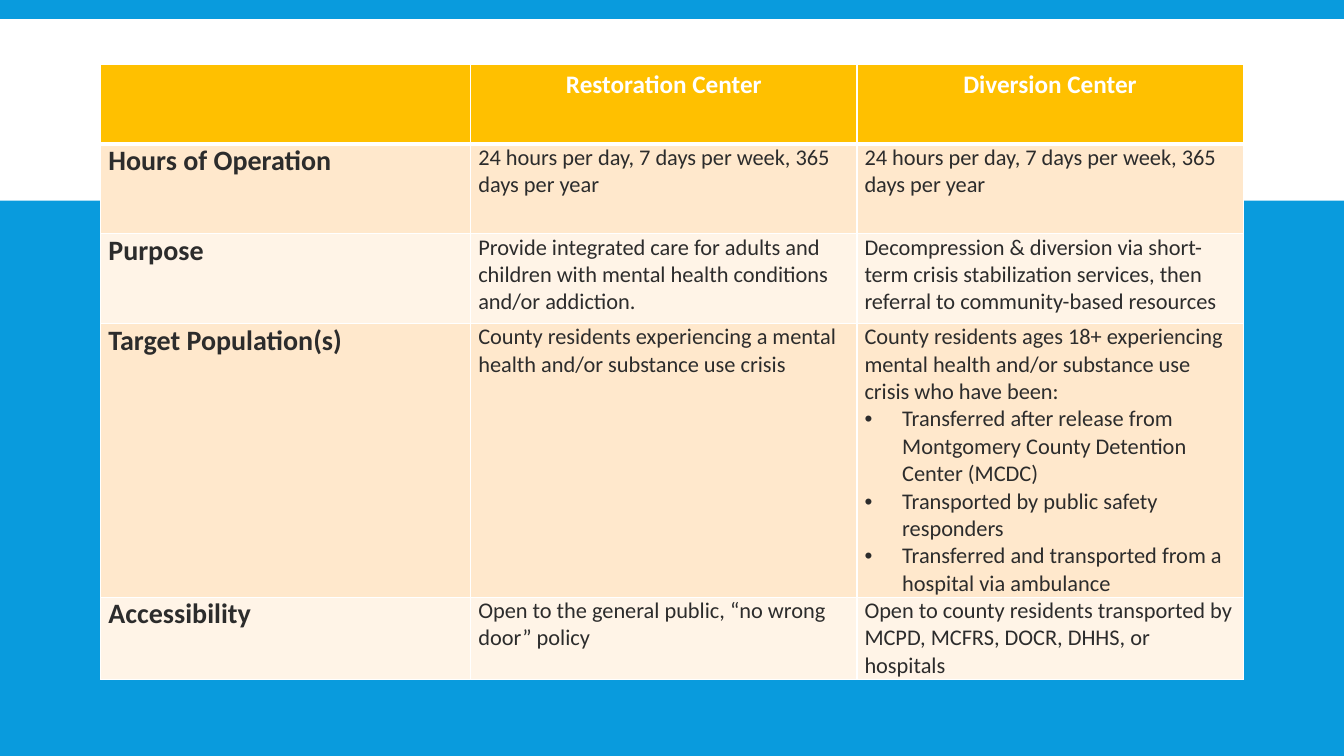
import lxml.etree
import pptx
import pptx.dml.color
import pptx.enum.shapes
import pptx.enum.text
import pptx.oxml.ns
import pptx.util

Cm = pptx.util.Cm
Pt = pptx.util.Pt
qn = pptx.oxml.ns.qn

HOURS = "24 hours per day, 7 days per week, 365 days per year"
ROWS = [
    ("", "Restoration Center", "Diversion Center"),
    ("Hours of Operation", HOURS, HOURS),
    ("Purpose",
     "Provide integrated care for adults and children with mental health "
     "conditions and/or addiction.",
     "Decompression & diversion via short-term crisis stabilization services, "
     "then referral to community-based resources"),
    ("Target Population(s)",
     "County residents experiencing a mental health and/or substance use crisis",
     ["County residents ages 18+ experiencing mental health and/or substance "
      "use crisis who have been:",
      "Transferred after release from Montgomery County Detention Center (MCDC)",
      "Transported by public safety responders",
      "Transferred and transported from a hospital via ambulance"]),
    ("Accessibility",
     "Open to the general public, “no wrong door” policy",
     "Open to county residents transported by MCPD, MCFRS, DOCR, DHHS, or hospitals"),
]


def color(code):
    return pptx.dml.color.RGBColor.from_string(code)


class Deck:
    """Holds the style and the current slide, and draws its elements."""

    font = "Calibri"
    white, blue, gold, ink = "FFFFFF", "099BDD", "FFC000", "2C2C2C"
    bands = ("FFE8CC", "FFF4E7")

    def __init__(self):
        self.show = pptx.Presentation()
        self.show.slide_width = Cm(33.86)
        self.show.slide_height = Cm(19.05)
        self.slide = self.show.slides.add_slide(self.show.slide_layouts[6])
        self.paint(self.slide.background.fill, self.blue)

    def paint(self, fill, code):
        fill.solid()
        fill.fore_color.rgb = color(code)

    def band(self, top, height):
        kind = pptx.enum.shapes.MSO_SHAPE.RECTANGLE
        shape = self.slide.shapes.add_shape(
            kind, 0, top, self.show.slide_width, height)
        shape.shadow.inherit = False
        shape.line.fill.background()
        self.paint(shape.fill, self.white)

    def table(self, left, top, widths, heights, rows):
        frame = self.slide.shapes.add_table(
            len(rows), len(widths), left, top, sum(widths), sum(heights))
        table = frame.table
        for col, width in zip(table.columns, widths):
            col.width = width
        for row, height in zip(table.rows, heights):
            row.height = height
        for i, row in enumerate(rows):
            for j, text in enumerate(row):
                self.cell(table.cell(i, j), i, j, text)

    def cell(self, cell, i, j, text):
        head = i == 0
        for side in "LRTB":
            thick = (head and side == "B") or (i == 1 and side == "T")
            self.edge(cell, side, 3 if thick else 1)
        self.paint(cell.fill, self.gold if head else self.bands[(i - 1) % 2])
        if not head:
            cell.margin_left = cell.margin_right = Cm(0.19)
            cell.margin_top = cell.margin_bottom = 0
        parts = [text] if isinstance(text, str) else text
        cell.text = "\n".join(parts)
        for n, para in enumerate(cell.text_frame.paragraphs):
            para.font.name = self.font
            para.font.size = Pt(18 if head else 20 if j == 0 else 16)
            para.font.bold = head or j == 0
            para.font.color.rgb = color(self.white if head else self.ink)
            if head:
                para.alignment = pptx.enum.text.PP_ALIGN.CENTER
            if n:
                self.bullet(para)

    def edge(self, cell, side, width):
        props = cell._tc.get_or_add_tcPr()
        line = lxml.etree.SubElement(props, qn("a:ln" + side), w=str(Pt(width)))
        fill = lxml.etree.SubElement(line, qn("a:solidFill"))
        lxml.etree.SubElement(fill, qn("a:srgbClr"), val=self.white)

    def bullet(self, para):
        props = para._p.get_or_add_pPr()
        props.set("marL", str(Cm(0.95)))
        props.set("indent", str(-Cm(0.95)))
        font = lxml.etree.Element(qn("a:buFont"), typeface="Arial")
        mark = lxml.etree.Element(qn("a:buChar"), char="•")
        props.insert(0, font)
        props.insert(1, mark)

    def save(self):
        self.show.save("out.pptx")


def main():
    deck = Deck()
    deck.band(Cm(0.48), Cm(4.58))
    widths = [Cm(9.32), Cm(9.73), Cm(9.73)]
    heights = [Cm(h) for h in (2, 2.26, 2.26, 6.78, 2)]
    deck.table(Cm(2.54), Cm(1.63), widths, heights, ROWS)
    deck.save()


if __name__ == "__main__":
    main()
